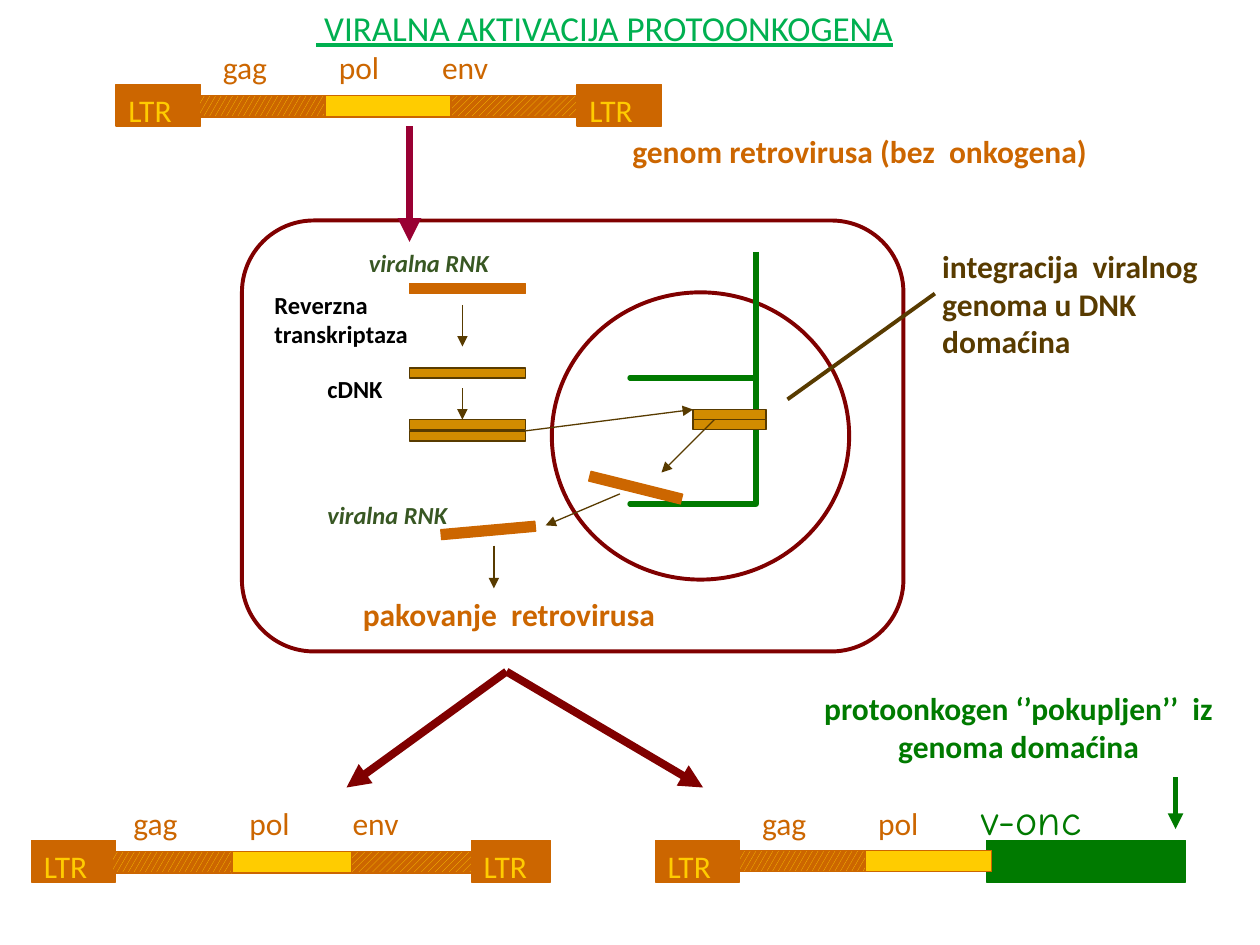
from lxml import etree
from pptx import Presentation
from pptx.dml.color import RGBColor
from pptx.enum.dml import MSO_PATTERN
from pptx.enum.shapes import MSO_CONNECTOR, MSO_SHAPE
from pptx.enum.text import MSO_ANCHOR, PP_ALIGN
from pptx.oxml.ns import qn
from pptx.util import Inches, Pt

RECT, ROUND, OVAL = MSO_SHAPE.RECTANGLE, MSO_SHAPE.ROUNDED_RECTANGLE, MSO_SHAPE.OVAL
CONFETTI, DIAGONAL = MSO_PATTERN.LARGE_CONFETTI, MSO_PATTERN.WIDE_UPWARD_DIAGONAL
LEFT, CENTER = PP_ALIGN.LEFT, PP_ALIGN.CENTER
STRAIGHT = MSO_CONNECTOR.STRAIGHT
COLORS = {
    "title": "00B050", "viral": "CC6600", "yellow": "FFCC00", "cell": "800000",
    "entry": "990033", "host": "007A00", "brown": "583B00", "dna": "D28C00",
    "rna_label": "385723", "black": "000000",
}
GENE_TABS = (0.92, 1.74)
CURVE_START = (5.92, 2.42)
CURVES = [
    ((6.06, 2.5), (6.19, 2.58), (6.17, 2.67)),
    ((6.14, 2.75), (5.74, 2.82), (5.75, 2.92)),
    ((5.76, 3.01), (6.35, 3.18), (6.25, 3.25)),
    ((6.15, 3.32), (5.17, 3.28), (5.17, 3.33)),
    ((5.17, 3.39), (6.19, 3.51), (6.25, 3.58)),
    ((6.31, 3.65), (5.57, 3.67), (5.5, 3.75)),
    ((5.43, 3.83), (5.63, 3.96), (5.83, 4.08)),
]


def rgb(name):
    return RGBColor.from_string(COLORS[name])


def style_span(span, size, color, bold=False, italic=False, font="Calibri"):
    span.font.name = font
    span.font.size = Pt(size)
    span.font.bold = bold
    span.font.italic = italic
    span.font.color.rgb = rgb(color)


def add_figure(page, kind, area, fill, line, width=0.75, rotation=0):
    figure = page.shapes.add_shape(kind, *map(Inches, area))
    figure.shadow.inherit = False
    figure.rotation = rotation
    if fill is None:
        figure.fill.background()
    elif fill in COLORS:
        figure.fill.solid()
        figure.fill.fore_color.rgb = rgb(fill)
    else:
        figure.fill.patterned()
        figure.fill.pattern = fill
        figure.fill.fore_color.rgb = rgb("yellow")
        figure.fill.back_color.rgb = rgb("viral")
    figure.line.color.rgb = rgb(line)
    figure.line.width = Pt(width)
    return figure


def add_text(page, area, text, size, color, bold=True, italic=False, align=LEFT):
    box = page.shapes.add_textbox(*map(Inches, area))
    box.text_frame.word_wrap = True
    para = box.text_frame.paragraphs[0]
    para.text = text
    para.alignment = align
    style_span(para.runs[0], size, color, bold, italic)
    return para


def add_line(page, start, end, color, width=0.75, arrow=True):
    line = page.shapes.add_connector(STRAIGHT, *map(Inches, start + end))
    line.line.color.rgb = rgb(color)
    line.line.width = Pt(width)
    if arrow:
        tail = etree.SubElement(line.line._get_or_add_ln(), qn("a:tailEnd"))
        tail.set("type", "triangle")
    etree.SubElement(line._element.spPr, qn("a:effectLst"))


def add_ltr(page, left, top, width):
    ltr = add_figure(page, RECT, (left, top, width, 0.33), "viral", "viral")
    frame = ltr.text_frame
    frame.vertical_anchor = MSO_ANCHOR.TOP
    frame.word_wrap = False
    para = frame.paragraphs[0]
    para.text = "LTR"
    para.alignment = LEFT
    style_span(para.runs[0], 18, "yellow")


def add_genes(page, left, top, fills, step):
    for index, fill in enumerate(fills):
        area = (left + index * step, top, step, 0.17)
        add_figure(page, RECT, area, fill, "viral")


def add_gene_names(page, left, top, text):
    para = add_text(page, (left, top, 3.25, 0.43), text, 18, "viral", bold=False)
    tabs = etree.SubElement(para._p.get_or_add_pPr(), qn("a:tabLst"))
    for position in GENE_TABS:
        etree.SubElement(tabs, qn("a:tab"), pos=str(Inches(position)), algn="l")
    return para


def add_chromosome(page):
    points, start = [], CURVE_START
    for first, second, end in CURVES:
        for step in range(1, 17):
            t = step / 16
            weights = ((1 - t) ** 3, 3 * t * (1 - t) ** 2, 3 * t * t * (1 - t), t ** 3)
            corners = (start, first, second, end)
            points.append(tuple(
                sum(weight * corner[axis] for weight, corner in zip(weights, corners))
                for axis in (0, 1)))
        start = end
    builder = page.shapes.build_freeform(*CURVE_START, scale=Inches(1))
    builder.add_line_segments(points, close=False)
    strand = builder.convert_to_shape()
    strand.shadow.inherit = False
    strand.fill.background()
    strand.line.color.rgb = rgb("host")
    strand.line.width = Pt(3)


def add_title(page):
    title = page.shapes.title
    title.left, title.top, title.width, title.height = map(Inches, (1.76, 0, 6.08, 0.44))
    title.text_frame.vertical_anchor = MSO_ANCHOR.TOP
    para = title.text_frame.paragraphs[0]
    para.text = " VIRALNA AKTIVACIJA PROTOONKOGENA"
    para.alignment = CENTER
    style_span(para.runs[0], 20, "title")
    para.runs[0].font.underline = True


def add_genomes(page):
    full = (CONFETTI, "yellow", DIAGONAL)
    for left, top, step, last_left, last_width, names in (
            (0.92, 0.67, 1, 4.58, 0.67, (1.67, 0.33)),
            (0.25, 6.67, 0.95, 3.74, 0.63, (0.96, 6.33))):
        add_ltr(page, left, top, 0.67)
        add_ltr(page, last_left, top, last_width)
        add_genes(page, last_left - 3 * step, top + 0.09, full, step)
        add_gene_names(page, *names, "gag\tpol\tenv")
    add_figure(page, RECT, (7.83, 6.67, 1.58, 0.33), "host", "host")
    add_ltr(page, 5.2, 6.67, 0.67)
    add_genes(page, 5.87, 6.75, full[:2], 1)
    para = add_gene_names(page, 5.95, 6.25, "gag\tpol\t")
    span = para.add_run()
    span.text = "v-onc"
    style_span(span, 24, "host", font="Comic Neue")


def add_replication(page):
    add_figure(page, RECT, (3.25, 2.25, 0.92, 0.08), "viral", "viral")
    for left, top, width in ((3.25, 2.92, 0.92), (3.25, 3.42, 0.92), (3.25, 3.33, 0.92),
                             (5.5, 3.33, 0.58), (5.5, 3.25, 0.58)):
        add_figure(page, RECT, (left, top, width, 0.08), "dna", "brown")
    for left, top, angle in ((4.67, 3.83, 14), (3.5, 4.17, 354.9)):
        add_figure(page, RECT, (left, top, 0.75, 0.08), "viral", "viral", rotation=angle)
    for start, end in (((3.67, 2.42), (3.67, 2.75)), ((3.67, 3.08), (3.67, 3.33)),
                       ((4.17, 3.42), (5.5, 3.25)), ((5.67, 3.33), (5.25, 3.75)),
                       ((4.92, 3.92), (4.33, 4.17)), ((3.92, 4.33), (3.92, 4.67))):
        add_line(page, start, end, "brown")
    for left, top in ((2.83, 1.92), (2.5, 3.92)):
        add_text(page, (left, top, 1.58, 0.33), "viralna RNK", 14, "rna_label", italic=True)
    add_text(page, (2.08, 2.25, 1.67, 0.57), "Reverzna transkriptaza", 14, "black")
    add_text(page, (2.5, 2.92, 0.83, 0.33), "cDNK", 14, "black")


def main():
    """Build the slide on viral activation of proto-oncogenes."""
    deck = Presentation()
    deck.slide_width, deck.slide_height = Inches(10), Inches(7.5)
    page = deck.slides.add_slide(deck.slide_layouts[5])
    add_title(page)
    add_figure(page, ROUND, (1.92, 1.75, 5.25, 3.42), None, "cell", 2.25)
    add_figure(page, OVAL, (4.38, 2.32, 2.36, 2.28), None, "cell", 2.25)
    add_genomes(page)
    add_chromosome(page)
    add_replication(page)
    add_line(page, (3.25, 1), (3.25, 1.92), "entry", 4.5)
    add_line(page, (7.42, 2.33), (6.25, 3.17), "brown", 2.25, arrow=False)
    for end in ((2.75, 6.25), (5.58, 6.25)):
        add_line(page, (4.02, 5.33), end, "cell", 4.5)
    add_line(page, (9.33, 6.17), (9.33, 6.58), "host", 3)
    for area, text, color, align in (
            ((4.92, 1, 4.92, 0.4), "genom retrovirusa (bez  onkogena)", "viral", LEFT),
            ((7.38, 1.91, 2.5, 1.01), "integracija  viralnog genoma u DNK domaćina",
             "brown", LEFT),
            ((2.25, 4.67, 3.58, 0.4), "pakovanje  retrovirusa", "viral", CENTER),
            ((6.17, 5.42, 3.83, 0.71), "protoonkogen ‘’pokupljen’’  iz genoma domaćina",
             "host", CENTER)):
        add_text(page, area, text, 18, color, align=align)
    deck.save("out.pptx")


if __name__ == "__main__":
    main()
